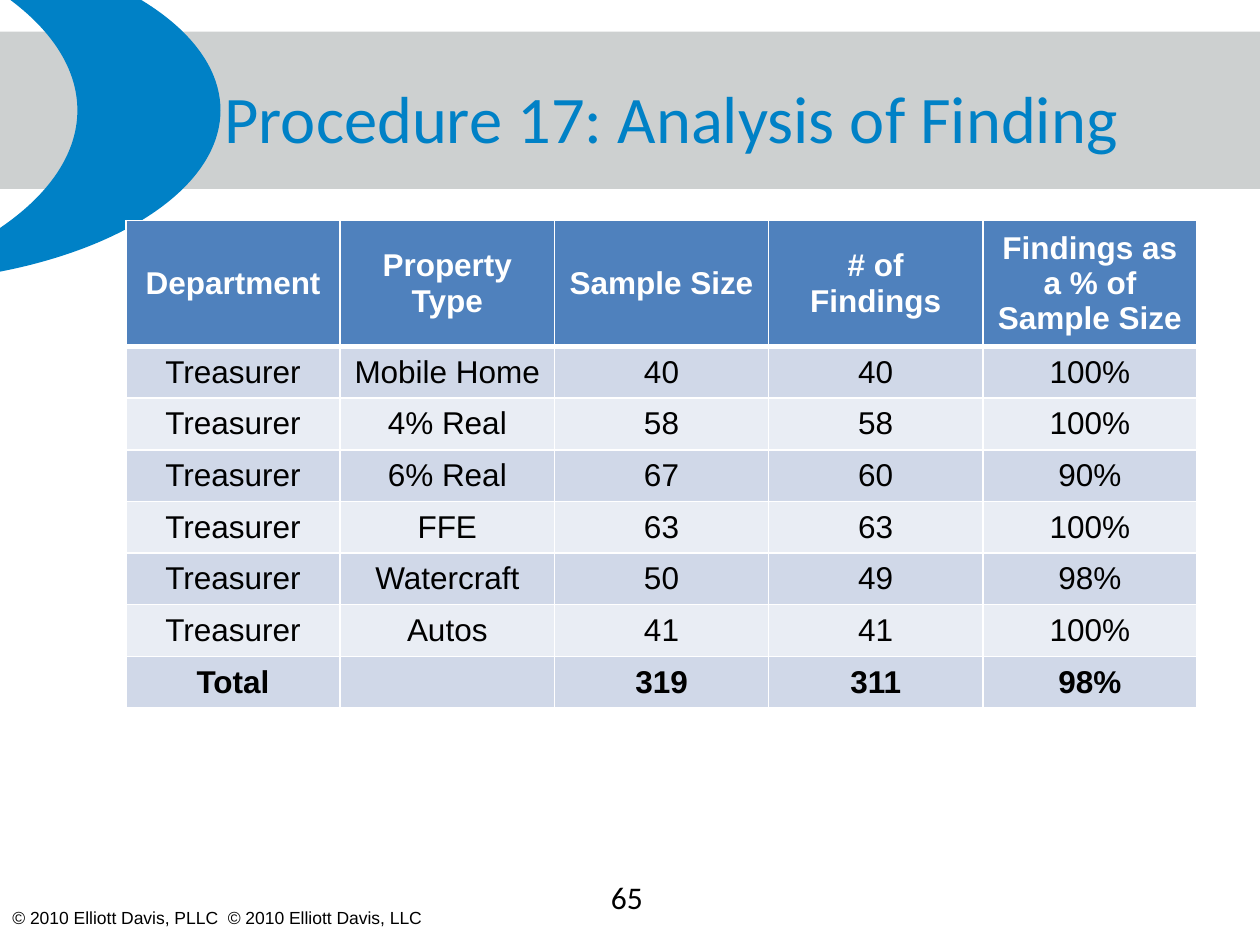
from lxml.etree import SubElement
from pptx import Presentation
from pptx.dml.color import RGBColor as RGB
from pptx.enum.shapes import MSO_SHAPE as Shape
from pptx.enum.text import MSO_ANCHOR as Anchor, PP_ALIGN as Align
from pptx.oxml.ns import qn
from pptx.util import Inches, Pt

HUES = {"gray": "C8CBCB", "blue": "0081C6", "head": "4F81BD", "dark": "D0D8E8",
        "light": "E9EDF4", "white": "FFFFFF", "black": "000000"}


def write(frame, text, size=18, font="Arial", hue="black", bold=False,
          align=Align.LEFT, anchor=Anchor.TOP):
    frame.word_wrap = True
    frame.vertical_anchor = anchor
    para = frame.paragraphs[0]
    para.alignment = align
    run = para.add_run()
    run.text = text
    run.font.size = Pt(size)
    run.font.name = font
    run.font.bold = bold
    run.font.color.rgb = RGB.from_string(HUES[hue])


def edge(cell, head):
    props = cell._tc.get_or_add_tcPr()
    for pos, side in enumerate(("lnL", "lnR", "lnT", "lnB")):
        wide = 3 if head and side == "lnB" else 1
        line = props.makeelement(qn("a:" + side), {"w": str(Pt(wide))})
        fill = SubElement(line, qn("a:solidFill"))
        SubElement(fill, qn("a:srgbClr"), val=HUES["white"])
        props.insert(pos, line)


deck = Presentation()
deck.slide_width, deck.slide_height = Inches(10), Inches(7.5)
slide = deck.slides.add_slide(deck.slide_layouts[6])
shapes = slide.shapes

# Banner and crescent
band = shapes.add_shape(Shape.RECTANGLE, 0, Inches(0.25), Inches(10), Inches(1.25))
moon = shapes.add_shape(Shape.MOON, Inches(-1), Inches(-0.5), Inches(2.75), Inches(2.75))
moon.rotation = 180
moon.adjustments[0] = 0.413
for shape, hue in ((band, "gray"), (moon, "blue")):
    shape.shadow.inherit = False
    shape.fill.solid()
    shape.fill.fore_color.rgb = RGB.from_string(HUES[hue])
    shape.line.fill.background()
tint = band._element.spPr.find(".//" + qn("a:srgbClr"))
SubElement(tint, qn("a:alpha"), val="90000")

# Copyright line, title and page number
copy = shapes.add_textbox(0, Inches(7.15), Inches(3.58), Inches(0.27))
write(copy.text_frame, "© 2010 Elliott Davis, PLLC  © 2010 Elliott Davis, LLC", size=10)
title = shapes.add_textbox(Inches(0.83), Inches(0.3), Inches(9), Inches(1.25))
write(title.text_frame, "Procedure 17: Analysis of Finding", size=38, font="Calibri",
      hue="blue", align=Align.CENTER, anchor=Anchor.MIDDLE)
page = shapes.add_textbox(Inches(4.75), Inches(6.92), Inches(0.5), Inches(0.4))
write(page.text_frame, "65", font="Calibri")

# Findings table
rows = [
    ("Department", "Property Type", "Sample Size", "# of Findings",
     "Findings as a % of Sample Size"),
    ("Treasurer", "Mobile Home", "40", "40", "100%"),
    ("Treasurer", "4% Real", "58", "58", "100%"),
    ("Treasurer", "6% Real", "67", "60", "90%"),
    ("Treasurer", "FFE", "63", "63", "100%"),
    ("Treasurer", "Watercraft", "50", "49", "98%"),
    ("Treasurer", "Autos", "41", "41", "100%"),
    ("Total", "", "319", "311", "98%"),
]
last = len(rows) - 1
table = shapes.add_table(len(rows), len(rows[0]), Inches(1), Inches(1.75),
                         Inches(8.5), Inches(3.84)).table
for col in table.columns:
    col.width = Inches(1.7)
for r, row in enumerate(rows):
    head = r == 0
    table.rows[r].height = Inches(0.94 if head else 0.41)
    shade = "head" if head else "dark" if r % 2 else "light"
    for c, text in enumerate(row):
        cell = table.cell(r, c)
        cell.fill.solid()
        cell.fill.fore_color.rgb = RGB.from_string(HUES[shade])
        cell.vertical_anchor = Anchor.MIDDLE
        edge(cell, head)
        if text:
            write(cell.text_frame, text, hue="white" if head else "black",
                  bold=r in (0, last), align=Align.CENTER, anchor=None)

deck.save("out.pptx")
